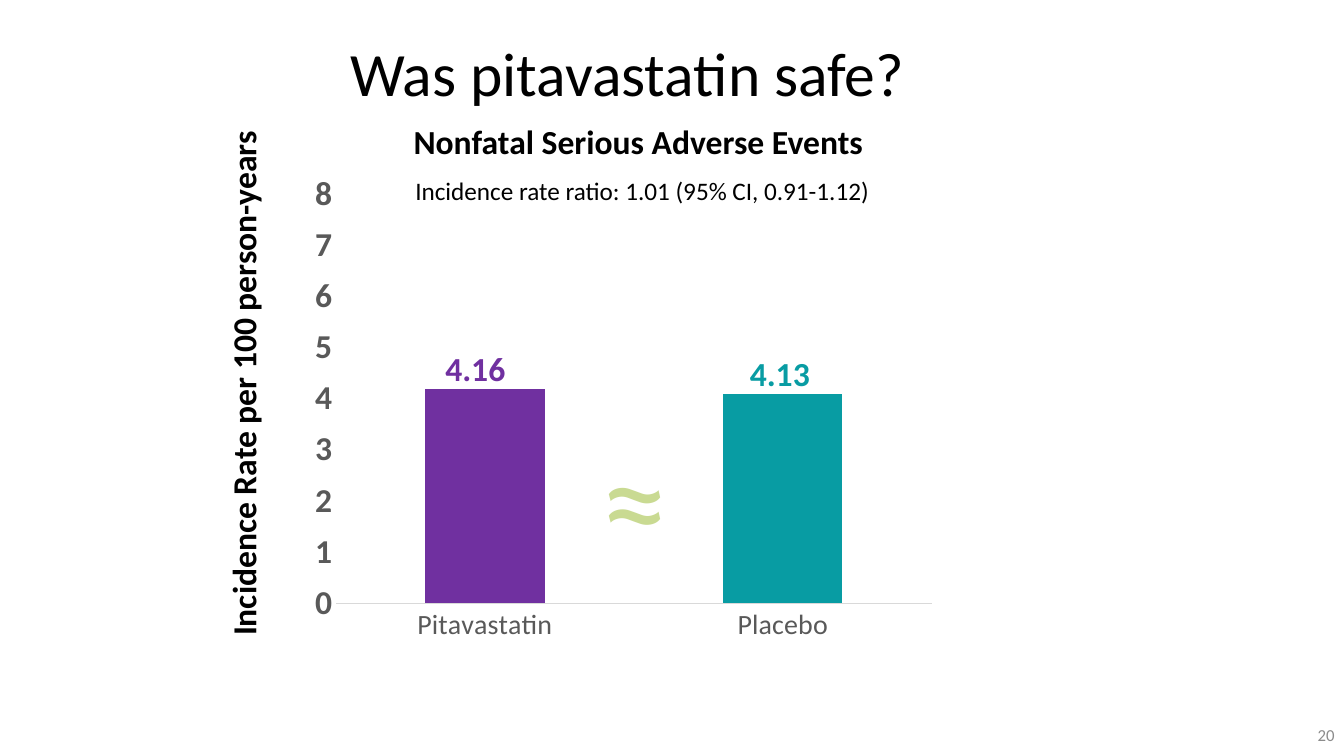
from dataclasses import dataclass

from lxml.etree import SubElement
from pptx import Presentation
from pptx.chart.data import CategoryChartData
from pptx.dml.color import RGBColor
from pptx.enum.chart import XL_CHART_TYPE, XL_TICK_MARK
from pptx.enum.text import MSO_ANCHOR, PP_ALIGN
from pptx.oxml.ns import qn
from pptx.util import Pt

FONT = "Calibri"
BLACK = RGBColor(0x00, 0x00, 0x00)
WHITE = RGBColor(0xFF, 0xFF, 0xFF)
PURPLE = RGBColor(0x70, 0x30, 0xA0)
TEAL = RGBColor(0x08, 0x9C, 0xA3)
LIME = RGBColor(0xC9, 0xDA, 0x92)
AXIS_TEXT = RGBColor(0x59, 0x59, 0x59)
AXIS_LINE = RGBColor(0xD9, 0xD9, 0xD9)
NUMBER_GRAY = RGBColor(0x8C, 0x8C, 0x8C)


@dataclass
class Label:
    text: str
    left: float
    top: float
    width: float
    height: float
    size: float
    color: RGBColor = BLACK
    bold: bool = False
    wrap: bool = True
    rotation: float = 0
    align: PP_ALIGN = PP_ALIGN.LEFT
    anchor: MSO_ANCHOR = MSO_ANCHOR.TOP
    line_spacing: float = 1.0


@dataclass
class Bar:
    name: str
    rate: float
    color: RGBColor


BARS = [Bar("Pitavastatin", 4.2, PURPLE), Bar("Placebo", 4.1, TEAL)]

TITLE = Label("Was pitavastatin safe?", 243, 2.2, 828, 104.4, 44,
              anchor=MSO_ANCHOR.MIDDLE, line_spacing=0.9)

LABELS = [
    Label("20", 744.5, 510.5, 216, 28.8, 12, NUMBER_GRAY,
          align=PP_ALIGN.RIGHT, anchor=MSO_ANCHOR.MIDDLE),
    Label("4.16", 311, 244.8, 60.5, 36, 24, PURPLE, bold=True),
    Label("4.13", 528.5, 248.4, 60.5, 36, 24, TEAL, bold=True),
    Label("Incidence Rate per 100 person-years", -15.8, 254, 378.7, 36, 24,
          bold=True, wrap=False, rotation=270),
    Label("Nonfatal Serious Adverse Events", 288.3, 82.8, 339.1, 36, 24,
          bold=True, wrap=False),
    Label("Incidence rate ratio: 1.01 (95% CI, 0.91-1.12)",
          289.6, 121.7, 342.7, 28.8, 18, wrap=False),
    Label("≈", 422.6, 293, 74.9, 123.8, 96, LIME),
]


def add_label(s, label: Label) -> None:
    sp = s.shapes.add_textbox(Pt(label.left), Pt(label.top),
                              Pt(label.width), Pt(label.height))
    sp.rotation = label.rotation
    tf = sp.text_frame
    tf.text = label.text
    tf.word_wrap = label.wrap
    tf.vertical_anchor = label.anchor
    p = tf.paragraphs[0]
    p.alignment = label.align
    p.line_spacing = label.line_spacing
    style_font(p.runs[0].font, label.size, label.color, label.bold)


def style_font(font, size: float, color: RGBColor, bold: bool = False) -> None:
    font.name = FONT
    font.size = Pt(size)
    font.bold = bold
    font.color.rgb = color


def set_plot_layout(chart, x: float, y: float, w: float, h: float) -> None:
    plot_area = chart.plots[0]._element.getparent()
    layout = plot_area.find(qn("c:layout"))
    if layout is None:
        layout = SubElement(plot_area, qn("c:layout"))
        plot_area.insert(0, layout)
    manual = SubElement(layout, qn("c:manualLayout"))
    settings = {"layoutTarget": "inner", "xMode": "edge", "yMode": "edge",
                "x": x, "y": y, "w": w, "h": h}
    for tag, value in settings.items():
        SubElement(manual, qn(f"c:{tag}")).set("val", str(value))


def add_rate_chart(s) -> None:
    data = CategoryChartData()
    data.categories = [bar.name for bar in BARS]
    data.add_series("Series 1", [bar.rate for bar in BARS])
    chart = s.shapes.add_chart(XL_CHART_TYPE.COLUMN_STACKED, Pt(192.7), Pt(124.2),
                               Pt(473.3), Pt(397.6), data).chart
    chart.has_legend = False
    chart.has_title = False
    style_font(chart.font, 10, BLACK)
    set_plot_layout(chart, 0.1, 0.03, 0.9, 0.74)

    # Bars
    plot = chart.plots[0]
    plot.vary_by_categories = False
    plot.gap_width = 150
    plot.overlap = 100
    for i, bar in enumerate(BARS):
        fill = plot.series[0].points[i].format.fill
        fill.solid()
        fill.fore_color.rgb = bar.color

    # Axes
    categories, rates = chart.category_axis, chart.value_axis
    for axis in (categories, rates):
        axis.major_tick_mark = XL_TICK_MARK.NONE
        axis.minor_tick_mark = XL_TICK_MARK.NONE
    style_font(categories.tick_labels.font, 20, AXIS_TEXT)
    categories.format.line.color.rgb = AXIS_LINE
    categories.format.line.width = Pt(0.75)
    style_font(rates.tick_labels.font, 24, AXIS_TEXT, bold=True)
    rates.tick_labels.number_format = "General"
    rates.tick_labels.number_format_is_linked = False
    rates.minimum_scale = 0
    rates.maximum_scale = 8
    rates.major_unit = 1
    rates.format.line.fill.background()
    rates.major_gridlines.format.line.color.rgb = WHITE
    rates.major_gridlines.format.line.width = Pt(0.75)


def main() -> None:
    prs = Presentation()
    prs.slide_width, prs.slide_height = Pt(960), Pt(540)
    s = prs.slides.add_slide(prs.slide_layouts[6])

    # Title, chart, then the labels on top
    add_label(s, TITLE)
    add_rate_chart(s)
    for label in LABELS:
        add_label(s, label)

    prs.save("out.pptx")


if __name__ == "__main__":
    main()
